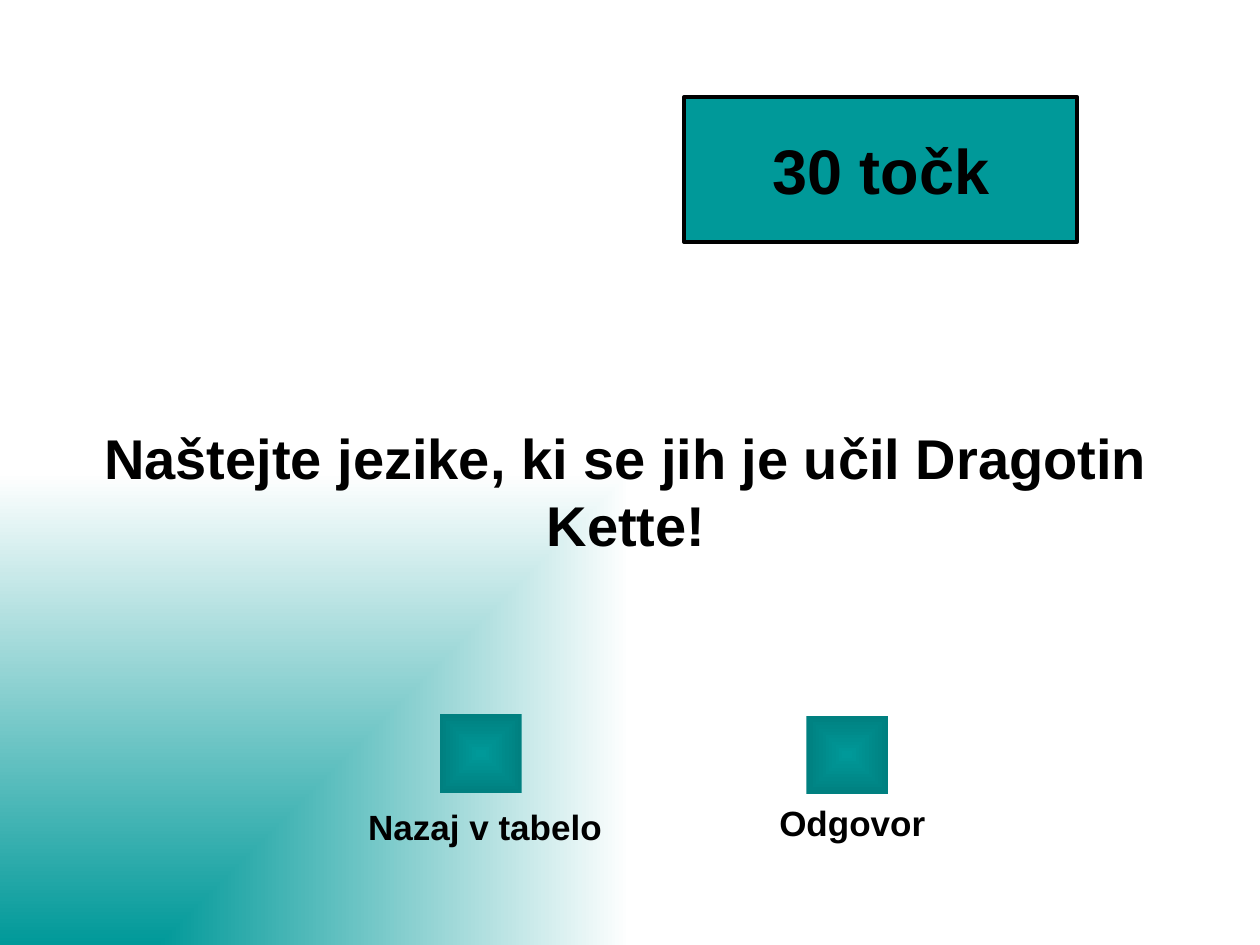
"""Quiz question slide with a score box and two navigation buttons."""
import pptx
import pptx.util
import pptx.dml.color
import pptx.enum.shapes
import pptx.enum.text
import pptx.oxml
import pptx.oxml.ns

W, H = 10, 7.5
FONT = "Arial"
COLORS = {"teal": "009999", "dark": "008080", "white": "FFFFFF", "black": "000000"}
QUESTION = ("Naštejte jezike, ki se jih je učil Dragotin Kette!", (0.66, 2.52, 8.62, 2.75))
SCORE = ("30 točk", (5.43, 0.77, 3.12, 1.15))
BUTTONS = [
    ("Nazaj v tabelo", (2.69, 6.34, 2.32, 0.43), (3.49, 5.67, 0.65, 0.62)),
    ("Odgovor", (5.8, 6.31, 1.93, 0.43), (6.4, 5.68, 0.65, 0.62)),
]
SHAPE = pptx.enum.shapes.MSO_SHAPE
ANCHOR = pptx.enum.text.MSO_ANCHOR


def inches(box):
    return [pptx.util.Inches(v) for v in box]


def rgb(name):
    return pptx.dml.color.RGBColor.from_string(COLORS[name])


def write(shape, text, size, anchor, wrap=True):
    tf = shape.text_frame
    tf.word_wrap = wrap
    tf.vertical_anchor = anchor
    p = tf.paragraphs[0]
    p.alignment = pptx.enum.text.PP_ALIGN.CENTER
    r = p.add_run()
    r.text = text
    r.font.name = FONT
    r.font.size = pptx.util.Pt(size)
    r.font.bold = True
    r.font.color.rgb = rgb("black")


def path_gradient(fill, element, start, end, focus):
    fill.solid()
    solid = element.find(".//" + pptx.oxml.ns.qn("a:solidFill"))
    l, t, r, b = (v * 1000 for v in focus)
    grad = pptx.oxml.parse_xml(
        f'<a:gradFill {pptx.oxml.ns.nsdecls("a")} rotWithShape="1"><a:gsLst>'
        f'<a:gs pos="0"><a:srgbClr val="{COLORS[start]}"/></a:gs>'
        f'<a:gs pos="100000"><a:srgbClr val="{COLORS[end]}"/></a:gs></a:gsLst>'
        f'<a:path path="rect"><a:fillToRect l="{l}" t="{t}" r="{r}" b="{b}"/></a:path>'
        '</a:gradFill>')
    solid.getparent().replace(solid, grad)


def add_shape(s, kind, box):
    sp = s.shapes.add_shape(kind, *inches(box))
    sp.shadow.inherit = False
    return sp


def main():
    prs = pptx.Presentation()
    prs.slide_width, prs.slide_height = inches((W, H))
    s = prs.slides.add_slide(prs.slide_layouts[5])
    path_gradient(s.background.fill, s.element, "teal", "white", (0, 100, 100, 0))

    text, box = QUESTION
    title = s.shapes.title
    title.left, title.top, title.width, title.height = inches(box)
    write(title, text, 32, ANCHOR.MIDDLE)

    text, box = SCORE
    sp = add_shape(s, SHAPE.RECTANGLE, box)
    sp.fill.solid()
    sp.fill.fore_color.rgb = rgb("teal")
    sp.line.color.rgb = rgb("black")
    sp.line.width = pptx.util.Pt(2.25)
    write(sp, text, 36, ANCHOR.MIDDLE, wrap=False)

    for text, label_box, button_box in BUTTONS:
        write(s.shapes.add_textbox(*inches(label_box)), text, 20, ANCHOR.TOP)
        sp = add_shape(s, SHAPE.ACTION_BUTTON_CUSTOM, button_box)
        path_gradient(sp.fill, sp.element, "teal", "dark", (50, 50, 50, 50))
        sp.line.fill.background()

    prs.save("out.pptx")


if __name__ == "__main__":
    main()
